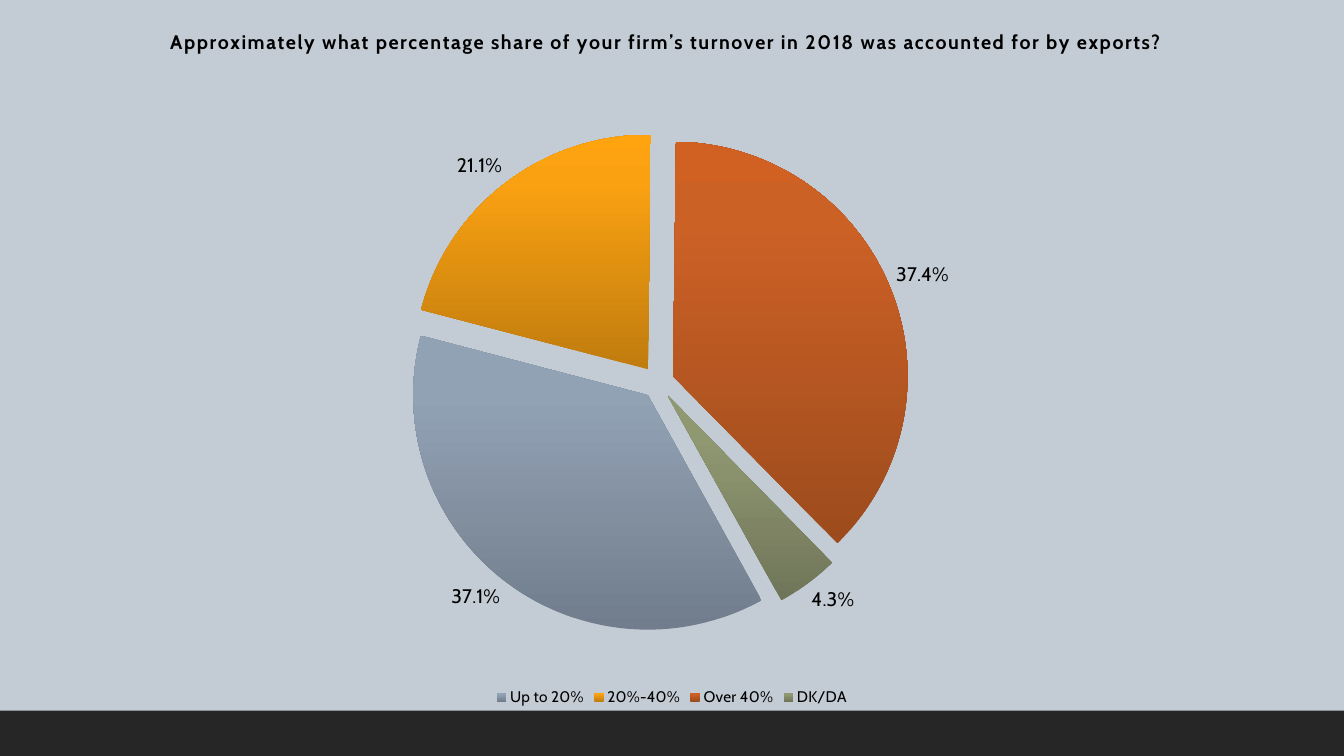
from lxml.etree import SubElement
from pptx import Presentation
from pptx.chart.data import CategoryChartData
from pptx.dml.color import RGBColor
from pptx.enum.chart import XL_CHART_TYPE, XL_LABEL_POSITION, XL_LEGEND_POSITION
from pptx.enum.shapes import MSO_SHAPE
from pptx.oxml import parse_xml
from pptx.oxml.ns import nsdecls, qn
from pptx.util import Inches, Pt

QUESTION = ("Approximately what percentage share of your firm’s turnover "
            "in 2018 was accounted for by exports?")
EXPORT_SHARES = {"Up to 20%": 37.1, "20%-40%": 21.1, "Over 40%": 37.4, "DK/DA": 4.3}
SLICE_GRADIENTS = [
    ("717D8C", "92A2B5", "92A3B7"),
    ("C07C0E", "FAA112", "FFA30E"),
    ("9D4B1D", "CC6126", "D06123"),
    ("6F7558", "909872", "919972"),
]
GRADIENT_STOPS = (0, 80, 100)


def color(hex_code):
    return RGBColor.from_string(hex_code)


def place(chart_part, index, **shares):
    """Set a manual layout, in shares of the chart, as the child at index."""
    for old in chart_part.findall(qn("c:layout")):
        chart_part.remove(old)
    layout = parse_xml(f"<c:layout {nsdecls('c')}/>")
    manual = SubElement(layout, qn("c:manualLayout"))
    if "w" in shares:
        SubElement(manual, qn("c:layoutTarget"), val="inner")
    for axis in "xy":
        SubElement(manual, qn(f"c:{axis}Mode"), val="edge")
    for side, share in shares.items():
        SubElement(manual, qn(f"c:{side}"), val=str(share))
    chart_part.insert(index, layout)


def gradient(properties, hex_codes):
    """Fill a chart element upwards, from the first colour to the last."""
    stops = "".join(
        f'<a:gs pos="{stop * 1000}"><a:srgbClr val="{code}"/></a:gs>'
        for stop, code in zip(GRADIENT_STOPS, hex_codes))
    properties.insert(0, parse_xml(
        f'<a:gradFill {nsdecls("a")} rotWithShape="1"><a:gsLst>{stops}</a:gsLst>'
        '<a:lin ang="16200000" scaled="0"/></a:gradFill>'))


class SurveySlide:
    font_name = "Cabin"
    text_color = "000000"

    def __init__(self, presentation):
        self.width = presentation.slide_width
        self.height = presentation.slide_height
        self.slide = presentation.slides.add_slide(presentation.slide_layouts[6])

    def box(self, left, top, width, height):
        """Turn shares of the slide into lengths."""
        return (int(left * self.width), int(top * self.height),
                int(width * self.width), int(height * self.height))

    def style(self, font, size, bold=False):
        font.name, font.size, font.bold = self.font_name, Pt(size), bold
        font.color.rgb = color(self.text_color)

    def add_text(self, frame, text, size, bold=False, spacing=0):
        run = frame.paragraphs[0].add_run()
        run.text = text
        self.style(run.font, size, bold)
        run.font._element.set("spc", str(spacing))

    def band(self, hex_code, *shares):
        band = self.slide.shapes.add_shape(MSO_SHAPE.RECTANGLE, *self.box(*shares))
        band.shadow.inherit = False
        band.fill.solid()
        band.fill.fore_color.rgb = color(hex_code)
        band.line.fill.background()

    def pie(self, question, answers, background, *shares):
        data = CategoryChartData(number_format="0.0")
        data.categories = list(answers)
        data.add_series("Series 1", list(answers.values()))
        chart = self.slide.shapes.add_chart(
            XL_CHART_TYPE.PIE, *self.box(*shares), data).chart
        self.style(chart.font, 10)
        chart.has_title = True
        self.add_text(chart.chart_title.text_frame, question, 14, bold=True, spacing=100)
        place(chart.chart_title._element, 1, x=0.124, y=0.035)
        self.legend(chart)
        self.slices(chart.plots[0])
        self.labels(chart.plots[0])
        place(chart._chartSpace.chart.plotArea, 0, x=0.233, y=0.185, w=0.513, h=0.706)
        chart._chartSpace.chart.addnext(parse_xml(
            f'<c:spPr {nsdecls("c", "a")}><a:solidFill><a:srgbClr val="{background}"/>'
            "</a:solidFill><a:ln><a:noFill/></a:ln></c:spPr>"))

    def legend(self, chart):
        chart.has_legend = True
        chart.legend.position = XL_LEGEND_POSITION.BOTTOM
        chart.legend.include_in_layout = False
        self.style(chart.legend.font, 11)

    def slices(self, plot):
        plot.vary_by_categories = True
        series = plot.series[0]
        for index, hex_codes in enumerate(SLICE_GRADIENTS):
            slice_format = series.points[index].format
            slice_format.line.fill.background()
            gradient(slice_format._element.spPr, hex_codes)
        series._element.find(qn("c:tx")).addnext(
            parse_xml(f'<c:explosion {nsdecls("c")} val="7"/>'))
        for old in plot._element.findall(qn("c:firstSliceAng")):
            plot._element.remove(old)
        SubElement(plot._element, qn("c:firstSliceAng"), val="151")

    def labels(self, plot):
        plot.has_data_labels = True
        labels = plot.data_labels
        labels.show_percentage, labels.show_value = True, False
        labels.number_format, labels.number_format_is_linked = "0.0%", False
        labels.position = XL_LABEL_POSITION.OUTSIDE_END
        self.style(labels.font, 14)


def main():
    presentation = Presentation()
    presentation.slide_width, presentation.slide_height = Inches(13.33), Inches(7.5)
    survey = SurveySlide(presentation)
    survey.band("262626", 0, 0.93, 1, 0.07)
    survey.pie(QUESTION, EXPORT_SHARES, "C3CBD4", 0, 0, 1, 0.94)
    presentation.save("out.pptx")


if __name__ == "__main__":
    main()
